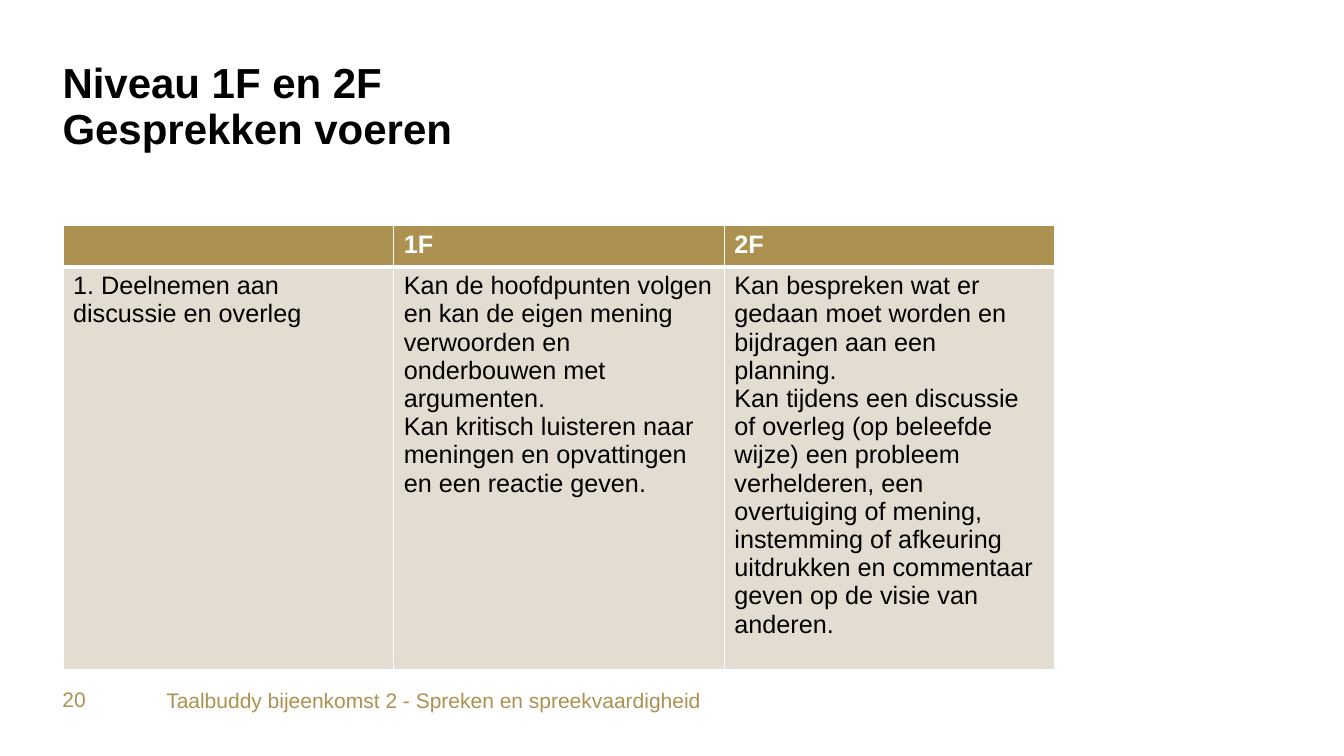
from lxml.etree import SubElement
from pptx import Presentation
from pptx.dml.color import RGBColor as RGB
from pptx.enum.text import MSO_ANCHOR as Anchor
from pptx.oxml.ns import qn
from pptx.util import Pt

COLORS = {"black": "000000", "white": "FFFFFF", "gold": "AD9150", "sand": "E3DCD0"}
FONT = "Arial"
LEFT = 44.64

ROWS = [
    ["", "1F", "2F"],
    [
        "1. Deelnemen aan discussie en overleg",
        "Kan de hoofdpunten volgen en kan de eigen mening verwoorden en "
        "onderbouwen met argumenten.\n"
        "Kan kritisch luisteren naar meningen en opvattingen en een reactie geven.",
        "Kan bespreken wat er gedaan moet worden en bijdragen aan een planning.\n"
        "Kan tijdens een discussie of overleg (op beleefde wijze) een probleem "
        "verhelderen, een overtuiging of mening, instemming of afkeuring uitdrukken "
        "en commentaar geven op de visie van anderen.",
    ],
]


class SlideBuilder:
    def __init__(self, prs):
        self.s = prs.slides.add_slide(prs.slide_layouts[6])

    def style(self, tf, size, color, bold=False, spacing=None):
        for p in tf.paragraphs:
            if spacing:
                p.line_spacing = spacing
            for r in p.runs:
                r.font.name = FONT
                r.font.size = Pt(size)
                r.font.bold = bold
                r.font.color.rgb = RGB.from_string(COLORS[color])

    def text(self, text, x, y, w, h, size, color, bold=False, spacing=None):
        tf = self.s.shapes.add_textbox(Pt(x), Pt(y), Pt(w), Pt(h)).text_frame
        tf.word_wrap = True
        tf.vertical_anchor = Anchor.TOP
        tf.margin_left = tf.margin_top = tf.margin_right = tf.margin_bottom = 0
        tf.text = text
        self.style(tf, size, color, bold, spacing)

    def borders(self, cell, top, bottom):
        tcPr = cell._tc.get_or_add_tcPr()
        widths = {"a:lnL": 1, "a:lnR": 1, "a:lnT": top, "a:lnB": bottom}
        for tag, width in widths.items():
            ln = SubElement(tcPr, qn(tag), w=str(Pt(width)))
            fill = SubElement(ln, qn("a:solidFill"))
            SubElement(fill, qn("a:srgbClr"), val=COLORS["white"])

    def table(self, rows, x, y, col_width, heights):
        n = len(rows[0])
        table = self.s.shapes.add_table(
            len(rows), n, Pt(x), Pt(y), Pt(col_width * n), Pt(sum(heights))
        ).table
        for col in table.columns:
            col.width = Pt(col_width)
        for i, texts in enumerate(rows):
            header = i == 0
            table.rows[i].height = Pt(heights[i])
            for j, text in enumerate(texts):
                cell = table.cell(i, j)
                # The heavy rule lies between the header and the body
                self.borders(cell, *((1, 3) if header else (3, 1)))
                cell.fill.solid()
                cell.fill.fore_color.rgb = RGB.from_string(
                    COLORS["gold" if header else "sand"])
                cell.text_frame.text = text
                self.style(cell.text_frame, 18, "white" if header else "black", header)


def main():
    prs = Presentation()
    prs.slide_width, prs.slide_height = Pt(960), Pt(540)
    slide = SlideBuilder(prs)

    # Title
    slide.text("Niveau 1F en 2F\vGesprekken voeren", LEFT, 44.64, 868, 94,
               30, "black", bold=True, spacing=0.9)

    # Level table
    slide.table(ROWS, LEFT + 0.4, 161.3, 236.2, [29.2, 268.6])

    # Footer and slide number
    slide.text("Taalbuddy bijeenkomst 2 - Spreken en spreekvaardigheid",
               118.8, 491, 776, 24.5, 15, "gold")
    slide.text("20", LEFT, 490.3, 60.5, 24, 15, "gold")

    prs.save("out.pptx")


if __name__ == "__main__":
    main()
